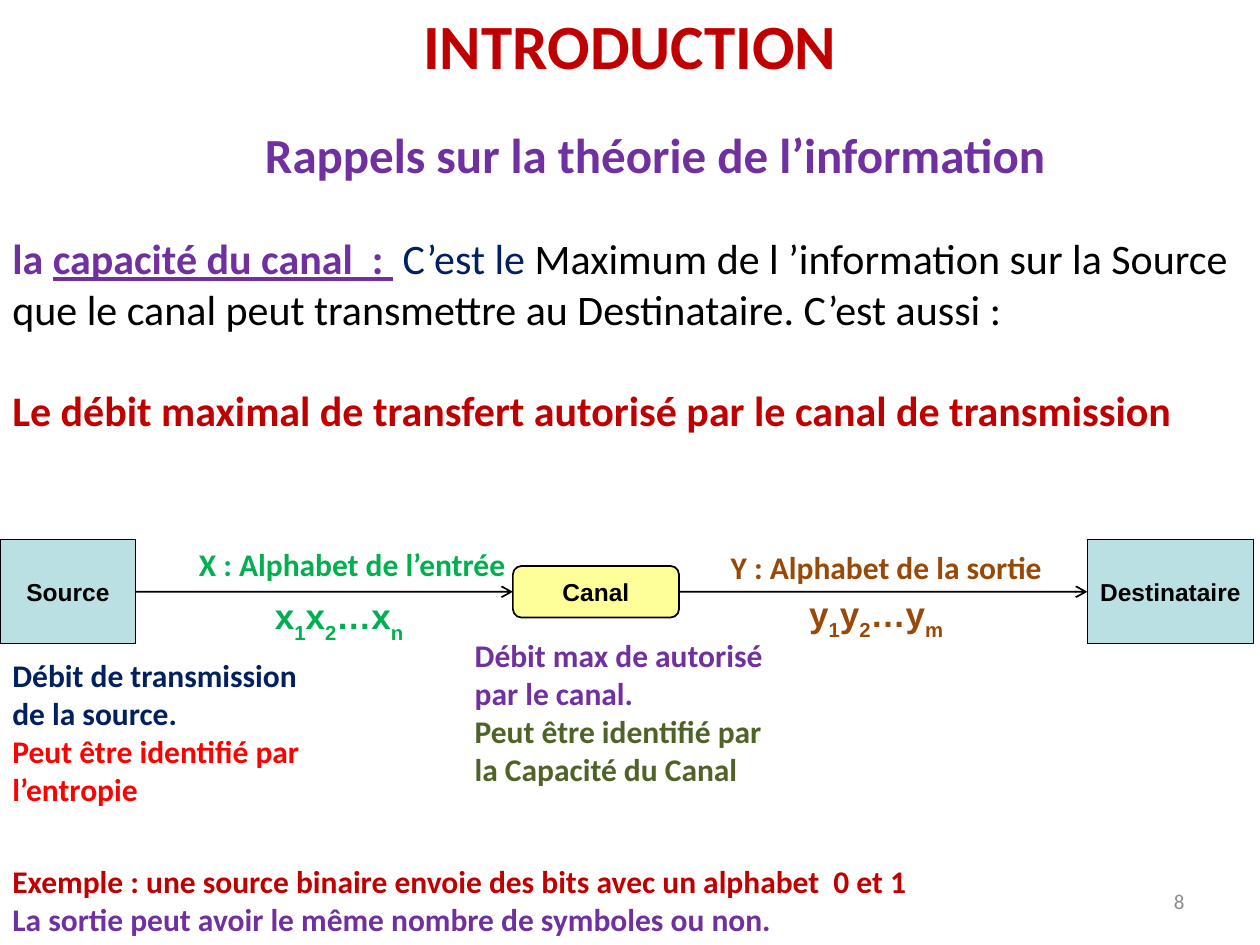
from dataclasses import dataclass

import pptx
import pptx.dml.color
import pptx.enum.shapes
import pptx.enum.text
import pptx.oxml.ns
import pptx.util
from lxml import etree

Cm, Pt = pptx.util.Cm, pptx.util.Pt
ALIGN = pptx.enum.text.PP_ALIGN
ANCHOR = pptx.enum.text.MSO_ANCHOR
SHAPE = pptx.enum.shapes.MSO_SHAPE
LEFT_SIDE, RIGHT_SIDE = 1, 3


@dataclass(frozen=True)
class Theme:
    text_font: str = "Calibri"
    diagram_font: str = "Arial"
    black: str = "000000"
    dark_red: str = "C00000"
    red: str = "FF0000"
    purple: str = "7030A0"
    navy: str = "002060"
    olive: str = "4F6228"
    green: str = "00B050"
    brown: str = "984807"
    grey: str = "8C8C8C"
    block_fill: str = "BBE0E3"
    channel_fill: str = "FFFF99"
    title: int = 36
    subtitle: int = 28
    body: int = 24
    symbols: int = 20
    note: int = 18
    block: int = 14
    page_number: int = 12


THEME = Theme()


def rgb(value):
    return pptx.dml.color.RGBColor.from_string(value)


def format_run(run, size, color, bold=True, font=THEME.text_font):
    run.font.name = font
    run.font.size = Pt(size)
    run.font.bold = bold
    run.font.color.rgb = rgb(color)


def set_diagram_margins(text_frame):
    text_frame.margin_left = text_frame.margin_right = Cm(0.18)
    text_frame.margin_top = text_frame.margin_bottom = Cm(0.08)


def add_text(slide, box, lines, size, align=ALIGN.LEFT, bold=True):
    """Add a text box holding one paragraph per (text, colour) pair."""
    shape = slide.shapes.add_textbox(*map(Cm, box))
    text_frame = shape.text_frame
    text_frame.word_wrap = True
    text_frame.text = "\n".join(text for text, _ in lines)
    for paragraph, (_, color) in zip(text_frame.paragraphs, lines):
        paragraph.alignment = align
        format_run(paragraph.runs[0], size, color, bold)
    return text_frame


def add_definition(slide, box):
    """Add the definition, whose first paragraph mixes several styles."""
    text_frame = slide.shapes.add_textbox(*map(Cm, box)).text_frame
    text_frame.word_wrap = True
    definition = text_frame.paragraphs[0]
    parts = [
        ("la\u00a0", THEME.purple, True, False),
        ("capacité du canal  : ", THEME.purple, True, True),
        (" ", THEME.purple, True, False),
        ("C’est le ", THEME.navy, False, False),
        ("Maximum de l ’information sur la Source que le canal peut "
         "transmettre au Destinataire. C’est aussi :", THEME.black, False, False),
    ]
    for text, color, bold, underline in parts:
        run = definition.add_run()
        run.text = text
        format_run(run, THEME.body, color, bold)
        run.font.underline = underline

    conclusion = text_frame.add_paragraph()
    conclusion.text = "Le débit maximal de transfert autorisé par le canal de transmission"
    conclusion.space_before = Pt(29.3)
    format_run(conclusion.runs[0], THEME.body, THEME.dark_red)


def add_symbols(slide, box, letter, last_index, color):
    """Add a sequence such as x1x2…xn with lowered indices."""
    text_frame = slide.shapes.add_textbox(*map(Cm, box)).text_frame
    text_frame.word_wrap = True
    set_diagram_margins(text_frame)
    paragraph = text_frame.paragraphs[0]
    for base, index in [(letter, "1"), (letter, "2"), ("…" + letter, last_index)]:
        for text, baseline in [(base, "0"), (index, "-30000")]:
            run = paragraph.add_run()
            run.text = text
            format_run(run, THEME.symbols, color, font=THEME.diagram_font)
            run._r.get_or_add_rPr().set("baseline", baseline)


def add_block(slide, preset, box, text, fill, line_width):
    shape = slide.shapes.add_shape(preset, *map(Cm, box))
    shape.shadow.inherit = False
    shape.fill.solid()
    shape.fill.fore_color.rgb = rgb(fill)
    shape.line.color.rgb = rgb(THEME.black)
    shape.line.width = Pt(line_width)
    text_frame = shape.text_frame
    set_diagram_margins(text_frame)
    text_frame.word_wrap = True
    text_frame.vertical_anchor = ANCHOR.MIDDLE
    text_frame.text = text
    paragraph = text_frame.paragraphs[0]
    paragraph.alignment = ALIGN.CENTER
    format_run(paragraph.runs[0], THEME.block, THEME.black, font=THEME.diagram_font)
    return shape


def add_arrow(slide, start, end):
    connector = slide.shapes.add_connector(
        pptx.enum.shapes.MSO_CONNECTOR.STRAIGHT, 0, 0, 0, 0)
    connector.begin_connect(start, RIGHT_SIDE)
    connector.end_connect(end, LEFT_SIDE)
    connector.line.color.rgb = rgb(THEME.black)
    connector.line.width = Pt(1)
    qn = pptx.oxml.ns.qn
    etree.SubElement(connector.line._get_or_add_ln(), qn("a:tailEnd"), type="arrow")
    etree.SubElement(connector._element.spPr, qn("a:effectLst"))


def add_diagram(slide):
    # Blocks share one horizontal axis
    axis, block_height, channel_height = 11.93, 2.1, 1.04
    block_top = axis - block_height / 2
    source = add_block(slide, SHAPE.RECTANGLE, (0, block_top, 2.74, block_height),
                       "Source", THEME.block_fill, 0.75)
    channel = add_block(slide, SHAPE.FLOWCHART_ALTERNATE_PROCESS,
                        (10.34, axis - channel_height / 2, 3.35, channel_height),
                        "Canal", THEME.channel_fill, 1)
    receiver = add_block(slide, SHAPE.RECTANGLE, (21.92, block_top, 3.35, block_height),
                         "Destinataire", THEME.block_fill, 0.75)
    add_arrow(slide, source, channel)
    add_arrow(slide, channel, receiver)

    # Alphabets above and below the arrows
    add_text(slide, (3.76, 10.87, 6.93, 1.02),
             [("X : Alphabet de l’entrée", THEME.green)], THEME.note)
    add_text(slide, (14.48, 10.92, 6.93, 1.02),
             [("Y : Alphabet de la sortie", THEME.brown)], THEME.note)
    add_symbols(slide, (5.36, 11.91, 3.58, 1.27), "x", "n", THEME.green)
    add_symbols(slide, (16.13, 11.86, 3.91, 1.04), "y", "m", THEME.brown)

    # Notes under the source and the channel
    add_text(slide, (0, 13.11, 6.35, 3.33),
             [("Débit de transmission de la source.", THEME.navy),
              ("Peut être identifié par l’entropie", THEME.red)], THEME.note)
    add_text(slide, (9.32, 12.7, 6.35, 3.33),
             [("Débit max de autorisé par le canal.", THEME.purple),
              ("Peut être identifié par la Capacité du Canal", THEME.olive)], THEME.note)


def main():
    presentation = pptx.Presentation()
    presentation.slide_width, presentation.slide_height = Cm(25.4), Cm(19.05)
    slide = presentation.slides.add_slide(presentation.slide_layouts[6])

    # Headings and definition
    add_text(slide, (0, 0, 25.4, 1.8), [("INTRODUCTION", THEME.dark_red)],
             THEME.title, ALIGN.CENTER)
    add_text(slide, (3.58, 2.39, 19.25, 1.45),
             [("Rappels sur la théorie de l’information", THEME.purple)],
             THEME.subtitle, ALIGN.CENTER)
    add_definition(slide, (0, 4.57, 25.4, 5.38))

    add_diagram(slide)

    # Example with hanging indents, and page number
    example = add_text(
        slide, (0, 17.25, 23.22, 1.8),
        [("Exemple : une source binaire envoie des bits avec un alphabet  0 et 1",
          THEME.dark_red),
         ("La sortie peut avoir le même nombre de symboles ou non.", THEME.purple)],
        THEME.note, ALIGN.JUSTIFY)
    for paragraph in example.paragraphs:
        properties = paragraph._p.get_or_add_pPr()
        properties.set("marL", str(Cm(0.97)))
        properties.set("indent", str(-Cm(0.97)))
    number = add_text(slide, (18.21, 17.65, 5.92, 1.02), [("8", THEME.grey)],
                      THEME.page_number, ALIGN.RIGHT, bold=False)
    number.vertical_anchor = ANCHOR.MIDDLE

    presentation.save("out.pptx")


if __name__ == "__main__":
    main()
